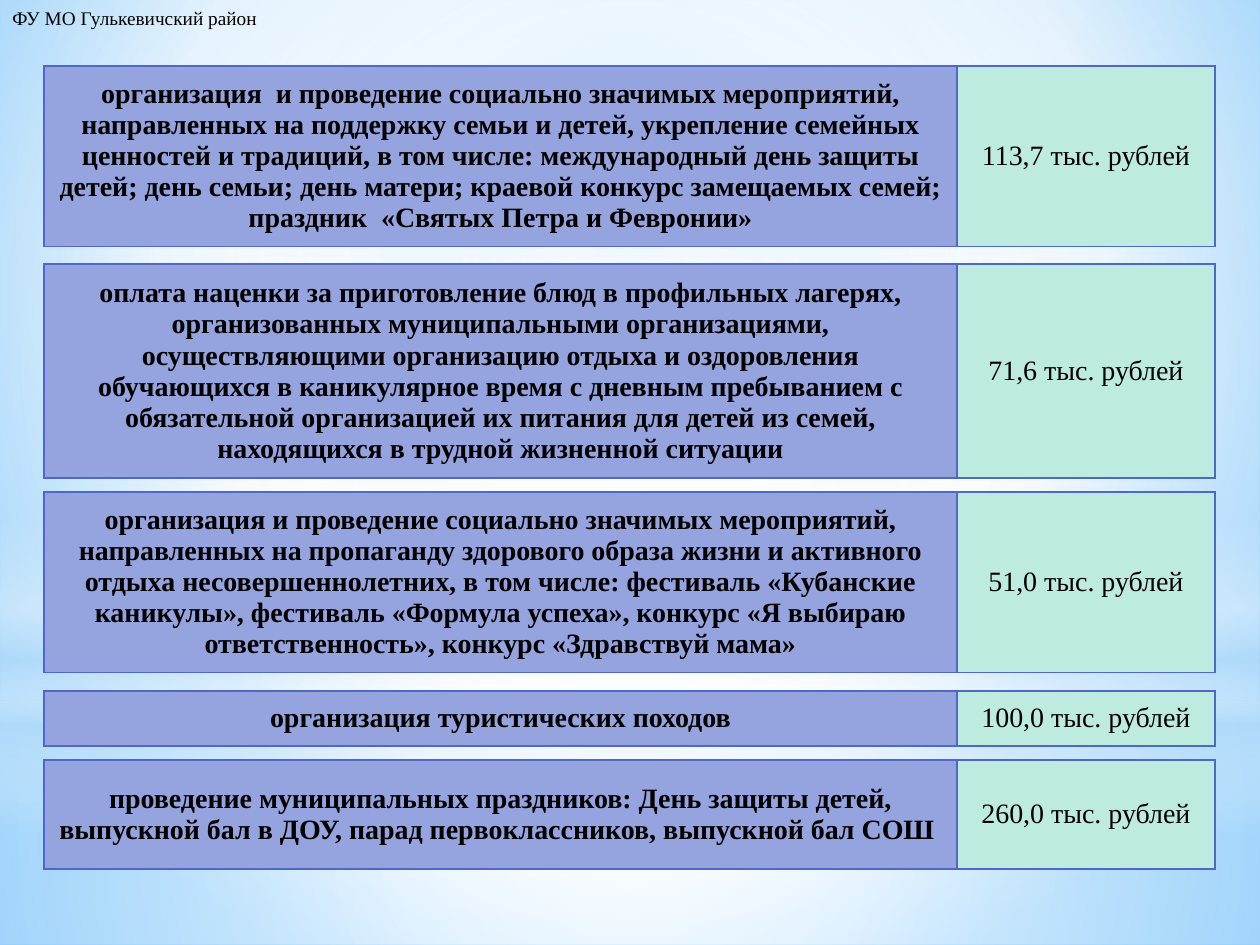
from dataclasses import dataclass
from typing import Optional

from lxml.etree import SubElement
from pptx import Presentation
from pptx.dml.color import RGBColor
from pptx.enum.shapes import MSO_SHAPE as Shape
from pptx.enum.text import MSO_ANCHOR as Anchor, MSO_AUTO_SIZE as AutoSize, PP_ALIGN as Align
from pptx.oxml.ns import qn
from pptx.util import Emu, Pt

PX = 914400 / 126  # EMU in one px
SLIDE_W, SLIDE_H = 1260, 945
FONT = "Times New Roman"
COLORS = {
    "text": "000000", "border": "4E67C8", "event": "95A4DE", "amount": "BEEBDF",
    "white": "FFFFFF", "haze": "B4DCFA", "sky": "9ED5FF", "deep_sky": "5BB9FF",
}
TABLE_LEFT, EVENT_W, AMOUNT_W = 44, 913, 258
CENTER = (50, 50, 50, 50)


@dataclass
class Stop:
    pos: int
    color: str
    opacity: int = 100


@dataclass
class Backdrop:
    shape: Shape
    top: int
    height: int
    stops: list[Stop]
    focus: Optional[tuple] = CENTER  # None gives a vertical linear gradient


@dataclass
class Expense:
    top: int
    height: int
    event: str
    amount: str


BACKDROPS = [
    Backdrop(Shape.RECTANGLE, 703, 242,
             [Stop(0, "white", 91), Stop(37, "white", 76), Stop(100, "haze", 79)]),
    Backdrop(Shape.RECTANGLE, 0, 703,
             [Stop(0, "white", 89), Stop(48, "white", 62), Stop(100, "haze", 79)]),
    Backdrop(Shape.RECTANGLE, 519, 315,
             [Stop(0, "white", 0), Stop(29, "white", 30), Stop(45, "haze", 40),
              Stop(55, "white", 26), Stop(65, "haze", 60), Stop(100, "white", 0)], None),
    Backdrop(Shape.OVAL, 220, 703, [Stop(0, "white"), Stop(56, "white", 0)]),
]

EXPENSES = [
    Expense(66, 180,
            "организация  и проведение социально значимых мероприятий, направленных на "
            "поддержку семьи и детей, укрепление семейных ценностей и традиций, в том числе: "
            "международный день защиты детей; день семьи; день матери; краевой конкурс "
            "замещаемых семей; праздник  «Святых Петра и Февронии»", "113,7 тыс. рублей"),
    Expense(264, 214,
            "оплата наценки за приготовление блюд в профильных лагерях, организованных "
            "муниципальными организациями, осуществляющими организацию отдыха и оздоровления "
            "обучающихся в каникулярное время с дневным пребыванием с обязательной "
            "организацией их питания для детей из семей, находящихся в трудной жизненной "
            "ситуации", "71,6 тыс. рублей"),
    Expense(492, 180,
            "организация и проведение социально значимых мероприятий, направленных на "
            "пропаганду здорового образа жизни и активного отдыха несовершеннолетних, в том "
            "числе: фестиваль «Кубанские каникулы», фестиваль «Формула успеха», конкурс "
            "«Я выбираю ответственность», конкурс «Здравствуй мама»", "51,0 тыс. рублей"),
    Expense(691, 55, "организация туристических походов", "100,0 тыс. рублей"),
    Expense(760, 109,
            "проведение муниципальных праздников: День защиты детей, выпускной бал в ДОУ, "
            "парад первоклассников, выпускной бал СОШ ", "260,0 тыс. рублей"),
]


def px(n: int) -> Emu:
    return Emu(round(n * PX))


def rgb(name: str) -> RGBColor:
    return RGBColor.from_string(COLORS[name])


def set_gradient(owner, fill, stops: list[Stop], focus: Optional[tuple]) -> None:
    """Give the fill of an owner element its stops and its direction."""
    fill.gradient()
    grad = owner.find(".//" + qn("a:gradFill"))
    grad.clear()
    grad.set("rotWithShape", "1")
    stop_list = SubElement(grad, qn("a:gsLst"))
    for stop in stops:
        gs = SubElement(stop_list, qn("a:gs"), pos=str(stop.pos * 1000))
        color = SubElement(gs, qn("a:srgbClr"), val=COLORS[stop.color])
        if stop.opacity < 100:
            SubElement(color, qn("a:alpha"), val=str(stop.opacity * 1000))
    if focus:
        circle = SubElement(grad, qn("a:path"), path="circle")
        SubElement(circle, qn("a:fillToRect"),
                   {side: str(v * 1000) for side, v in zip("ltrb", focus)})
    else:
        SubElement(grad, qn("a:lin"), ang="5400000", scaled="0")


def add_backdrop(slide, item: Backdrop) -> None:
    sp = slide.shapes.add_shape(item.shape, 0, px(item.top), px(SLIDE_W), px(item.height))
    sp.shadow.inherit = False
    sp.line.fill.background()
    set_gradient(sp.element, sp.fill, item.stops, item.focus)


def format_run(r, size: int, bold: bool = False) -> None:
    r.font.name, r.font.size, r.font.bold = FONT, Pt(size), bold
    r.font.color.rgb = rgb("text")


def set_borders(cell) -> None:
    props = cell._tc.get_or_add_tcPr()
    for i, side in enumerate(("lnL", "lnR", "lnT", "lnB")):
        ln = props.makeelement(qn(f"a:{side}"), {"w": str(Pt(1))})
        SubElement(SubElement(ln, qn("a:solidFill")), qn("a:srgbClr"), val=COLORS["border"])
        props.insert(i, ln)


def fill_cell(cell, text: str, color: str, bold: bool) -> None:
    cell.fill.solid()
    cell.fill.fore_color.rgb = rgb(color)
    cell.vertical_anchor = Anchor.MIDDLE
    p = cell.text_frame.paragraphs[0]
    p.text = text
    p.alignment = Align.CENTER
    format_run(p.runs[0], 16, bold)
    set_borders(cell)


def add_expense(slide, item: Expense) -> None:
    table = slide.shapes.add_table(1, 2, px(TABLE_LEFT), px(item.top),
                                   px(EVENT_W + AMOUNT_W), px(item.height)).table
    table.first_row = table.horz_banding = False
    for column, width in zip(table.columns, (EVENT_W, AMOUNT_W)):
        column.width = px(width)
    fill_cell(table.cell(0, 0), item.event, "event", True)
    fill_cell(table.cell(0, 1), item.amount, "amount", False)


def add_office_label(slide) -> None:
    tf = slide.shapes.add_textbox(0, 0, px(275), px(36)).text_frame
    tf.text = "ФУ МО Гулькевичский район"
    tf.word_wrap = False
    tf.auto_size = AutoSize.SHAPE_TO_FIT_TEXT
    format_run(tf.paragraphs[0].runs[0], 11)


def main() -> None:
    prs = Presentation()
    prs.slide_width, prs.slide_height = px(SLIDE_W), px(SLIDE_H)
    slide = prs.slides.add_slide(prs.slide_layouts[6])

    # Sky background and its soft light
    set_gradient(slide.element, slide.background.fill,
                 [Stop(0, "sky"), Stop(60, "white"), Stop(100, "deep_sky")], (20, 10, 20, 60))
    for item in BACKDROPS:
        add_backdrop(slide, item)

    # Office name and expenses
    add_office_label(slide)
    for item in EXPENSES:
        add_expense(slide, item)

    prs.save("out.pptx")


if __name__ == "__main__":
    main()
